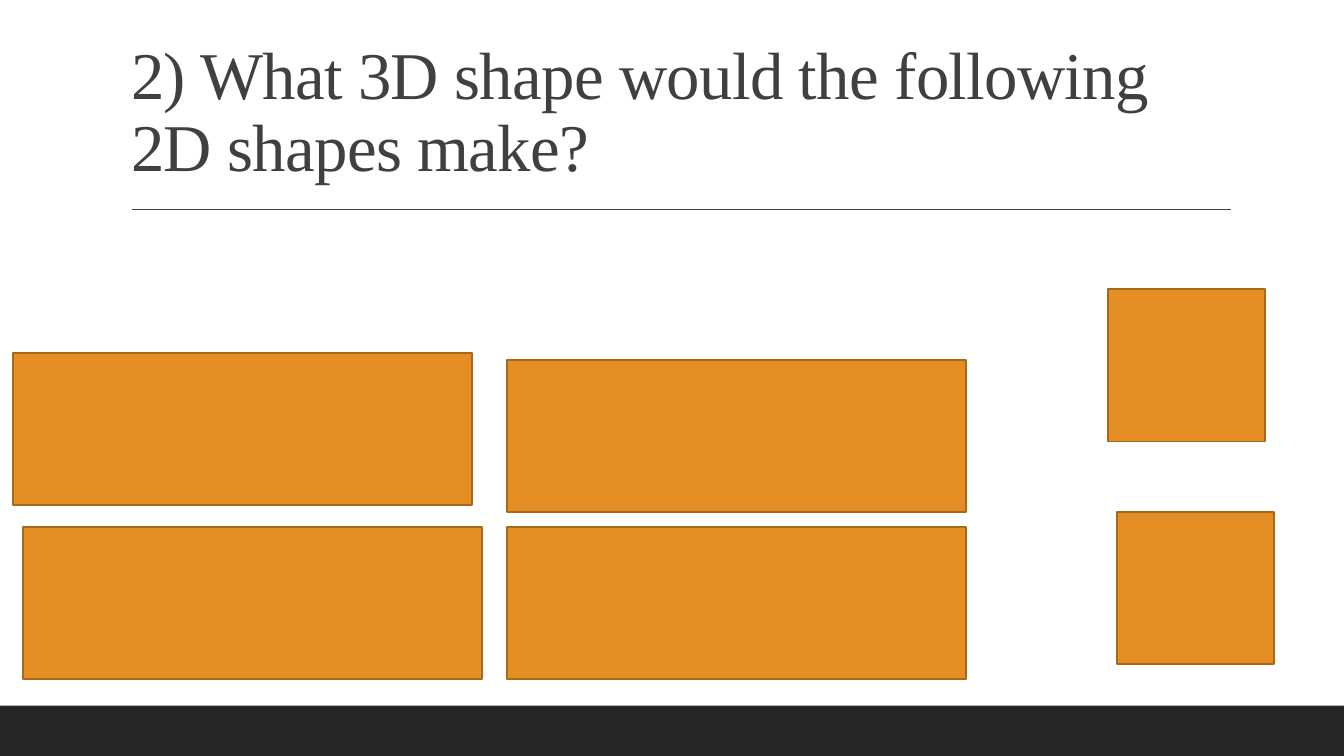
from pptx import Presentation
from pptx.dml.color import RGBColor as RGB
from pptx.enum.shapes import MSO_CONNECTOR as LINK, MSO_SHAPE as SHAPE
from pptx.enum.text import MSO_ANCHOR as ANCHOR, MSO_AUTO_SIZE as AUTO, PP_ALIGN as ALIGN
from pptx.oxml.ns import qn
from pptx.util import Inches, Pt
from lxml import etree

WIDTH, HEIGHT = 13.33, 7.5
ORANGE = RGB(0xE5, 0x8E, 0x24)
BROWN = RGB(0xA9, 0x69, 0x1B)
BLACK = RGB(0x26, 0x26, 0x26)
GREY = RGB(0x40, 0x40, 0x40)
FACE = 1.51
LONG, SHORT = 4.55, 1.56
LOW = 5.23
LONGS = [(0.13, 3.5), (5.03, 3.57), (0.23, LOW), (5.03, LOW)]
ENDS = [(10.99, 2.87), (11.08, 5.08)]


def add_rect(slide, left, top, width, height, fill, edge=None):
    box = [Inches(n) for n in (left, top, width, height)]
    rect = slide.shapes.add_shape(SHAPE.RECTANGLE, *box)
    rect.shadow.inherit = False
    rect.fill.solid()
    rect.fill.fore_color.rgb = fill
    if edge is None:
        rect.line.fill.background()
    else:
        rect.line.color.rgb = edge
        rect.line.width = Pt(1.25)


def add_rule(slide, left, right, top):
    ends = [Inches(n) for n in (left, top, right, top)]
    rule = slide.shapes.add_connector(LINK.STRAIGHT, *ends)
    rule.line.color.rgb = GREY
    rule.line.width = Pt(1)
    etree.SubElement(rule._element.spPr, qn("a:effectLst"))


def set_title(slide, text):
    title = slide.shapes.title
    title.left, title.top = Inches(1.2), Inches(0.31)
    title.width, title.height = Inches(11), Inches(1.59)
    frame = title.text_frame
    frame.word_wrap = True
    frame.auto_size = AUTO.NONE
    frame.vertical_anchor = ANCHOR.BOTTOM
    para = frame.paragraphs[0]
    para.alignment = ALIGN.LEFT
    para.line_spacing = 0.9
    run = para.add_run()
    run.text = text
    run.font.name = "Times New Roman"
    run.font.size = Pt(47.7)
    run.font.color.rgb = GREY
    run.font._element.set("spc", "-50")


def main():
    deck = Presentation()
    deck.slide_width, deck.slide_height = Inches(WIDTH), Inches(HEIGHT)
    slide = deck.slides.add_slide(deck.slide_layouts[5])
    add_rect(slide, 0, HEIGHT - 0.5, WIDTH, 0.5, BLACK)
    add_rule(slide, 1.31, 12.21, 2.08)
    set_title(slide, "2) What 3D shape would the following 2D shapes make?")
    for width, spots in ((SHORT, ENDS), (LONG, LONGS)):
        for left, top in spots:
            add_rect(slide, left, top, width, FACE, ORANGE, BROWN)
    deck.save("out.pptx")


if __name__ == "__main__":
    main()
